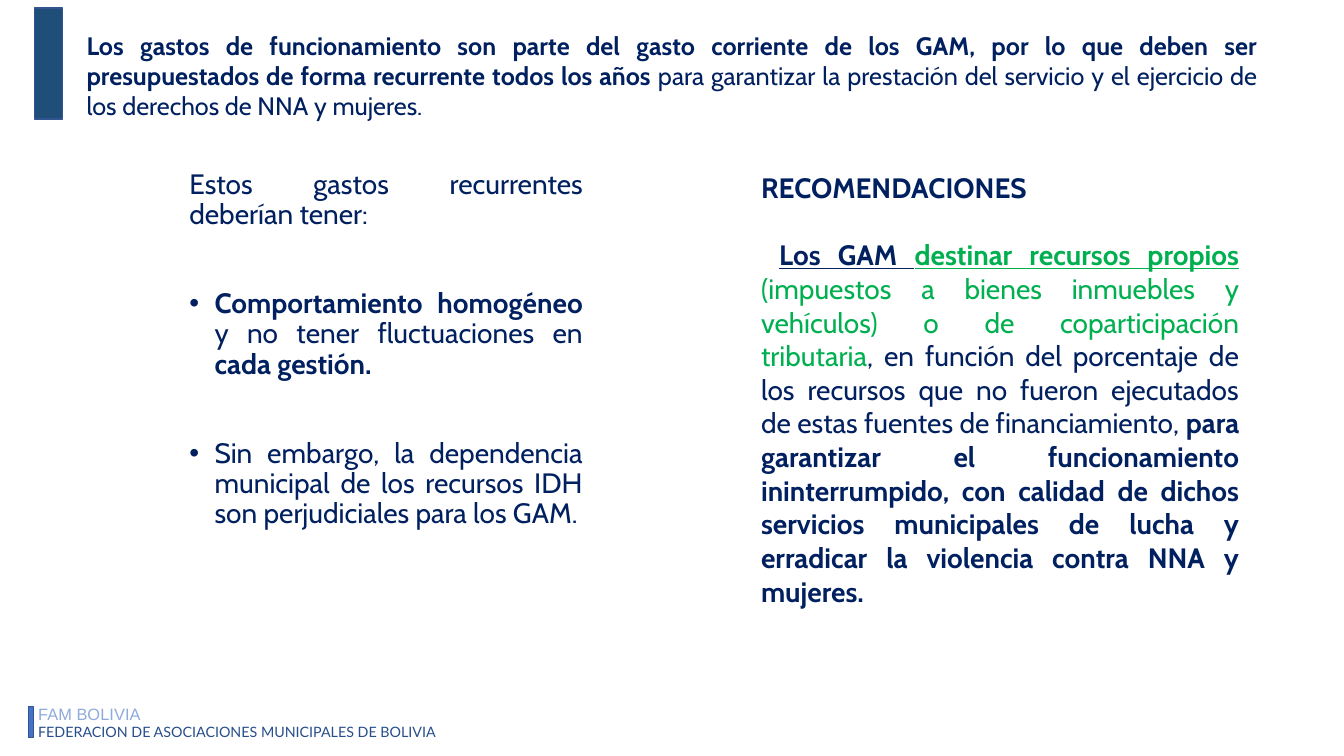
"""Build the slide on recurrent operating expenses of the GAM."""
from dataclasses import dataclass

from lxml import etree
from pptx import Presentation
from pptx.dml.color import RGBColor
from pptx.enum.shapes import MSO_SHAPE
from pptx.enum.text import MSO_ANCHOR, MSO_AUTO_SIZE, PP_ALIGN
from pptx.oxml.ns import qn
from pptx.util import Inches, Pt

RECTANGLE = MSO_SHAPE.RECTANGLE
TOP, MIDDLE = MSO_ANCHOR.TOP, MSO_ANCHOR.MIDDLE
LEFT, JUSTIFY = PP_ALIGN.LEFT, PP_ALIGN.JUSTIFY
NO_AUTOFIT, GROW = MSO_AUTO_SIZE.NONE, MSO_AUTO_SIZE.SHAPE_TO_FIT_TEXT

COLORS = {
    "navy": "002060",
    "green": "00B050",
    "sky": "8FAADC",
    "royal": "274E8A",
    "accent": "4472C4",
    "steel": "1F4E79",
    "outline": "325491",
}


@dataclass(frozen=True)
class Span:
    text: str
    bold: bool = False
    underline: bool = False
    color: str = "navy"
    size: float = 20
    font: str = "Cabin"
    raised: bool = False


@dataclass(frozen=True)
class Para:
    spans: tuple[Span, ...]
    align: PP_ALIGN = JUSTIFY
    line_spacing: float = 1.0
    space_before: float = 0
    margin: float = 0
    indent: float = 0
    bullet: str = ""


@dataclass(frozen=True)
class TextBlock:
    left: float
    top: float
    width: float
    height: float
    paras: tuple[Para, ...]
    anchor: MSO_ANCHOR = TOP
    autosize: MSO_AUTO_SIZE = GROW


@dataclass(frozen=True)
class Bar:
    left: float
    top: float
    width: float
    height: float
    fill: str


BARS = (
    Bar(0.28, 7.01, 0.05, 0.31, "accent"),
    Bar(0.34, 0.08, 0.28, 1.1, "steel"),
)


def bullet_para(*spans: Span) -> Para:
    return Para(spans, line_spacing=0.9, space_before=42, margin=0.25, indent=-0.25, bullet="•")


FOOTER = TextBlock(0.28, 6.5, 4.22, 1.45, (
    Para((Span("FAM BOLIVIA", color="sky", size=11.7, font="Arial"),), LEFT, 0.9),
    Para((Span("FEDERACION DE ASOCIACIONES MUNICIPALES DE BOLIVIA",
               color="royal", size=17.6, font="Lato", raised=True),), LEFT, 0.9),
), MIDDLE, NO_AUTOFIT)

EXPENSES = TextBlock(1.78, 1.64, 4.1, 5.2, (
    Para((Span("Estos gastos recurrentes deberían tener:"),), line_spacing=0.9),
    bullet_para(
        Span("Comportamiento homogéneo ", bold=True),
        Span("y no tener fluctuaciones en "),
        Span("cada gestión.", bold=True),
    ),
    bullet_para(Span("Sin embargo, la dependencia municipal de los recursos IDH "
                     "son perjudiciales para los GAM.")),
), autosize=NO_AUTOFIT)

RECOMMENDATIONS = TextBlock(7.45, 1.64, 4.94, 4.48, (
    Para((Span("RECOMENDACIONES", bold=True),)),
    Para((
        Span("Los GAM ", bold=True, underline=True),
        Span("destinar recursos propios", bold=True, underline=True, color="green"),
        Span(" ", bold=True, color="green"),
        Span("(impuestos a bienes inmuebles y vehículos) o de coparticipación tributaria",
             color="green"),
        Span(", en función del porcentaje de los recursos que no fueron ejecutados "
             "de estas fuentes de financiamiento, "),
        Span("para garantizar el funcionamiento ininterrumpido, con calidad de dichos "
             "servicios municipales de lucha y erradicar la violencia contra NNA y mujeres.",
             bold=True),
    ), space_before=24.3, indent=0.18),
))

HEADING = TextBlock(0.76, 0.25, 11.81, 1.01, (
    Para((
        Span("Los gastos de funcionamiento son parte del gasto corriente de los GAM, por lo que "
             "deben ser presupuestados de forma recurrente todos los años", bold=True, size=18),
        Span(" para garantizar la prestación del servicio y el ejercicio de los derechos "
             "de NNA y mujeres.", size=18),
    )),
))


def rgb(name: str) -> RGBColor:
    return RGBColor.from_string(COLORS[name])


def draw_bar(page, bar: Bar) -> None:
    shape = page.shapes.add_shape(
        RECTANGLE, Inches(bar.left), Inches(bar.top), Inches(bar.width), Inches(bar.height))
    shape.shadow.inherit = False
    shape.fill.solid()
    shape.fill.fore_color.rgb = rgb(bar.fill)
    shape.line.color.rgb = rgb(COLORS and "outline")
    shape.line.width = Pt(1)


def add_span(paragraph, span: Span) -> None:
    run = paragraph.add_run()
    run.text = span.text
    run.font.name = span.font
    run.font.size = Pt(span.size)
    run.font.bold = span.bold
    run.font.underline = span.underline
    run.font.color.rgb = rgb(span.color)
    if span.raised:
        run._r.get_or_add_rPr().set("baseline", "30000")


def format_para(paragraph, para: Para) -> None:
    paragraph.alignment = para.align
    paragraph.line_spacing = para.line_spacing
    paragraph.space_before = Pt(para.space_before)
    properties = paragraph._p.get_or_add_pPr()
    properties.set("marL", str(Inches(para.margin)))
    properties.set("indent", str(Inches(para.indent)))
    if para.bullet:
        etree.SubElement(properties, qn("a:buFont"), typeface="Arial")
        etree.SubElement(properties, qn("a:buChar"), char=para.bullet)


def draw_text(page, block: TextBlock) -> None:
    box = page.shapes.add_textbox(
        Inches(block.left), Inches(block.top), Inches(block.width), Inches(block.height))
    frame = box.text_frame
    frame.word_wrap = True
    frame.auto_size = block.autosize
    frame.vertical_anchor = block.anchor
    for index, para in enumerate(block.paras):
        paragraph = frame.add_paragraph() if index else frame.paragraphs[0]
        format_para(paragraph, para)
        for span in para.spans:
            add_span(paragraph, span)


def main() -> None:
    deck = Presentation()
    deck.slide_width, deck.slide_height = Inches(13.33), Inches(7.5)
    page = deck.slides.add_slide(deck.slide_layouts[6])
    for bar in BARS:
        draw_bar(page, bar)
    for block in (FOOTER, EXPENSES, RECOMMENDATIONS, HEADING):
        draw_text(page, block)
    deck.save("out.pptx")


if __name__ == "__main__":
    main()
